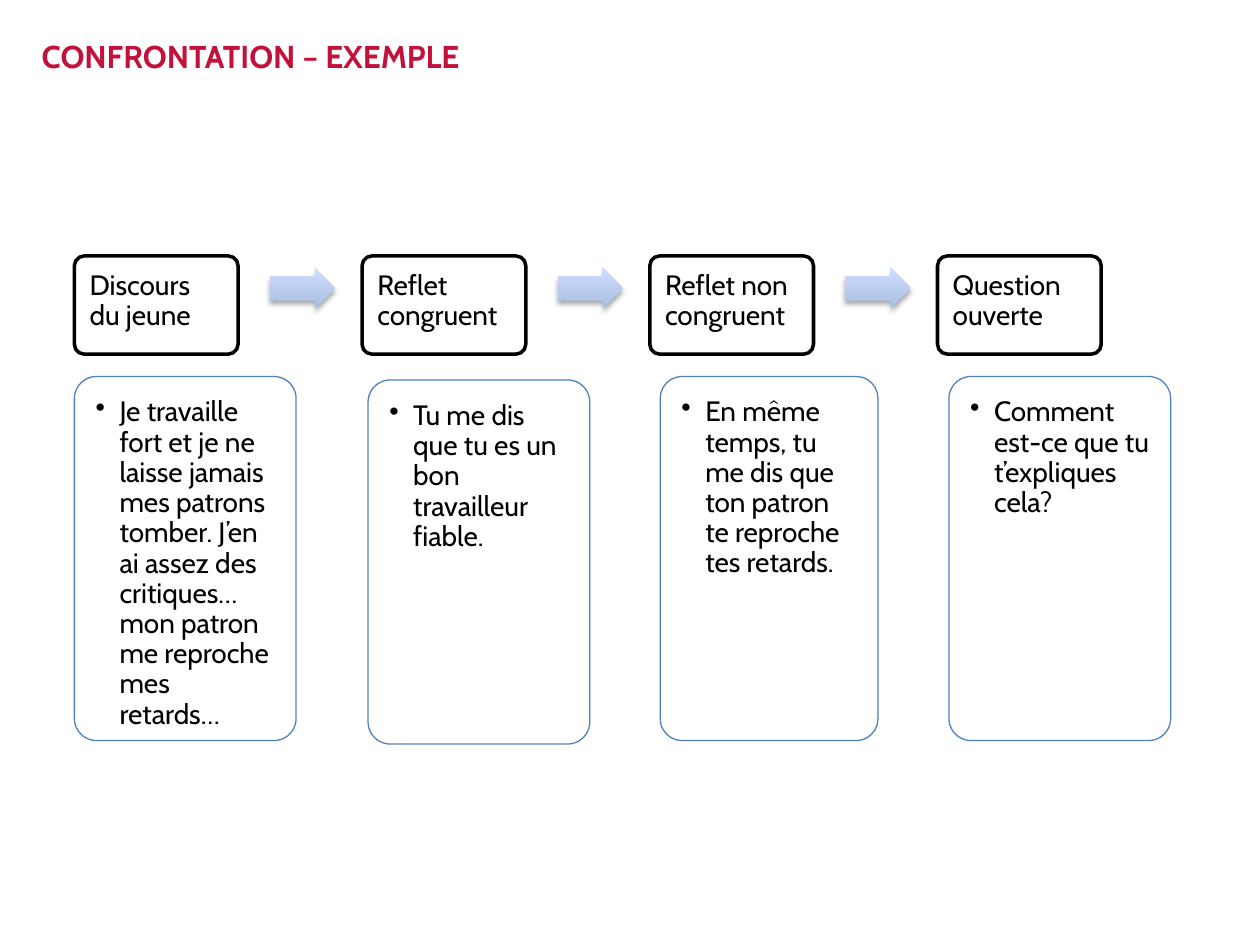
from lxml import etree
from pptx import Presentation
from pptx.dml.color import RGBColor
from pptx.enum.shapes import MSO_SHAPE
from pptx.enum.text import MSO_ANCHOR, PP_ALIGN
from pptx.oxml.ns import qn
from pptx.util import Cm, Pt

ROUNDED, ARROW = MSO_SHAPE.ROUNDED_RECTANGLE, MSO_SHAPE.RIGHT_ARROW
TOP, LEFT = MSO_ANCHOR.TOP, PP_ALIGN.LEFT

RED = RGBColor(0xC2, 0x11, 0x3A)
BLACK = RGBColor(0x00, 0x00, 0x00)
WHITE = RGBColor(0xFF, 0xFF, 0xFF)
BLUE = RGBColor(0x4F, 0x81, 0xBD)
ARROW_DARK = RGBColor(0xAD, 0xBF, 0xE1)
ARROW_LIGHT = RGBColor(0xCC, 0xDD, 0xFF)

FIRST_X, STEP_X = 1.5, 5.8
HEADER_Y, CARD_Y, ARROW_Y = 5.16, 7.59, 5.41

# Header, card text, then card left, top and width in cm
STEPS = [
    ("Discours du jeune",
     "Je travaille fort et je ne laisse jamais mes patrons tomber. J’en ai assez "
     "des critiques… mon patron me reproche mes retards…", 1.5, CARD_Y, 4.47),
    ("Reflet congruent",
     "Tu me dis que tu es un bon travailleur fiable.", 7.42, CARD_Y + 0.07, 4.47),
    ("Reflet non congruent",
     "En même temps, tu me dis que ton patron te reproche tes retards.",
     13.31, CARD_Y, 4.39),
    ("Question ouverte",
     "Comment est-ce que tu t’expliques cela?", 19.13, CARD_Y, 4.47),
]


class ProcessSlide:
    font = "Cabin"

    def __init__(self, prs):
        self.s = prs.slides.add_slide(prs.slide_layouts[5])

    def set_text(self, sp, text, size, color, inset, bold=False):
        tf = sp.text_frame
        tf.text = text
        tf.word_wrap = True
        tf.vertical_anchor = TOP
        tf.margin_left = tf.margin_right = Cm(inset)
        tf.margin_top = tf.margin_bottom = Cm(inset)
        p = tf.paragraphs[0]
        p.alignment = LEFT
        for r in p.runs:
            r.font.name, r.font.size, r.font.bold = self.font, Pt(size), bold
            r.font.color.rgb = color
        return p

    def title(self, text):
        sp = self.s.shapes.title
        sp.left, sp.top, sp.width, sp.height = Cm(0.84), Cm(0.74), Cm(23.7), Cm(1.93)
        self.set_text(sp, text, 18, RED, 0, bold=True)

    def box(self, text, x, y, w, h, line, weight, inset):
        sp = self.s.shapes.add_shape(ROUNDED, Cm(x), Cm(y), Cm(w), Cm(h))
        sp.adjustments[0] = 0.1
        sp.shadow.inherit = False
        sp.fill.solid()
        sp.fill.fore_color.rgb = WHITE
        sp.line.color.rgb = line
        sp.line.width = Pt(weight)
        p = self.set_text(sp, text, 16, BLACK, inset)
        p.line_spacing = 0.9
        return sp, p

    def header(self, text, x):
        self.box(text, x, HEADER_Y, 3.3, 1.98, BLACK, 2, 0.25)

    def card(self, text, x, y, w):
        sp, p = self.box(text, x, y, w, 7.34, BLUE, 0.75, 0.3)
        # Slightly transparent fill
        color = sp._element.spPr.find(qn("a:solidFill"))[0]
        etree.SubElement(color, qn("a:alpha"), val="90000")
        # Hanging bullet
        pPr = p._p.get_or_add_pPr()
        pPr.set("marL", str(Cm(0.48)))
        pPr.set("indent", str(-Cm(0.48)))
        etree.SubElement(pPr, qn("a:buChar"), char="•")

    def arrow(self, x):
        sp = self.s.shapes.add_shape(ARROW, Cm(x), Cm(ARROW_Y), Cm(1.32), Cm(0.81))
        sp.adjustments[0], sp.adjustments[1] = 0.6, 0.5
        sp.fill.gradient()
        sp.fill.gradient_angle = 90
        for stop, color, pos in zip(sp.fill.gradient_stops,
                                    (ARROW_DARK, ARROW_LIGHT), (0, 1)):
            stop.color.rgb = color
            stop.position = pos
        sp.line.fill.background()
        # Soft shadow below the arrow
        sp.shadow.inherit = False
        effects = sp._element.spPr.find(qn("a:effectLst"))
        shadow = etree.SubElement(effects, qn("a:outerShdw"), blurRad=str(Pt(3.1)),
                                  dist=str(Pt(1.8)), dir="5400000", rotWithShape="0")
        color = etree.SubElement(shadow, qn("a:srgbClr"), val=str(BLACK))
        etree.SubElement(color, qn("a:alpha"), val="35000")


def main():
    prs = Presentation()
    prs.slide_width, prs.slide_height = Cm(25.4), Cm(19.05)
    slide = ProcessSlide(prs)
    slide.title("CONFRONTATION – EXEMPLE")

    # One column per step, with an arrow between neighbours
    for i, (header, text, x, y, w) in enumerate(STEPS):
        left = FIRST_X + i * STEP_X
        slide.header(header, left)
        slide.card(text, x, y, w)
        if i < len(STEPS) - 1:
            slide.arrow(left + 3.94)

    prs.save("out.pptx")


if __name__ == "__main__":
    main()
